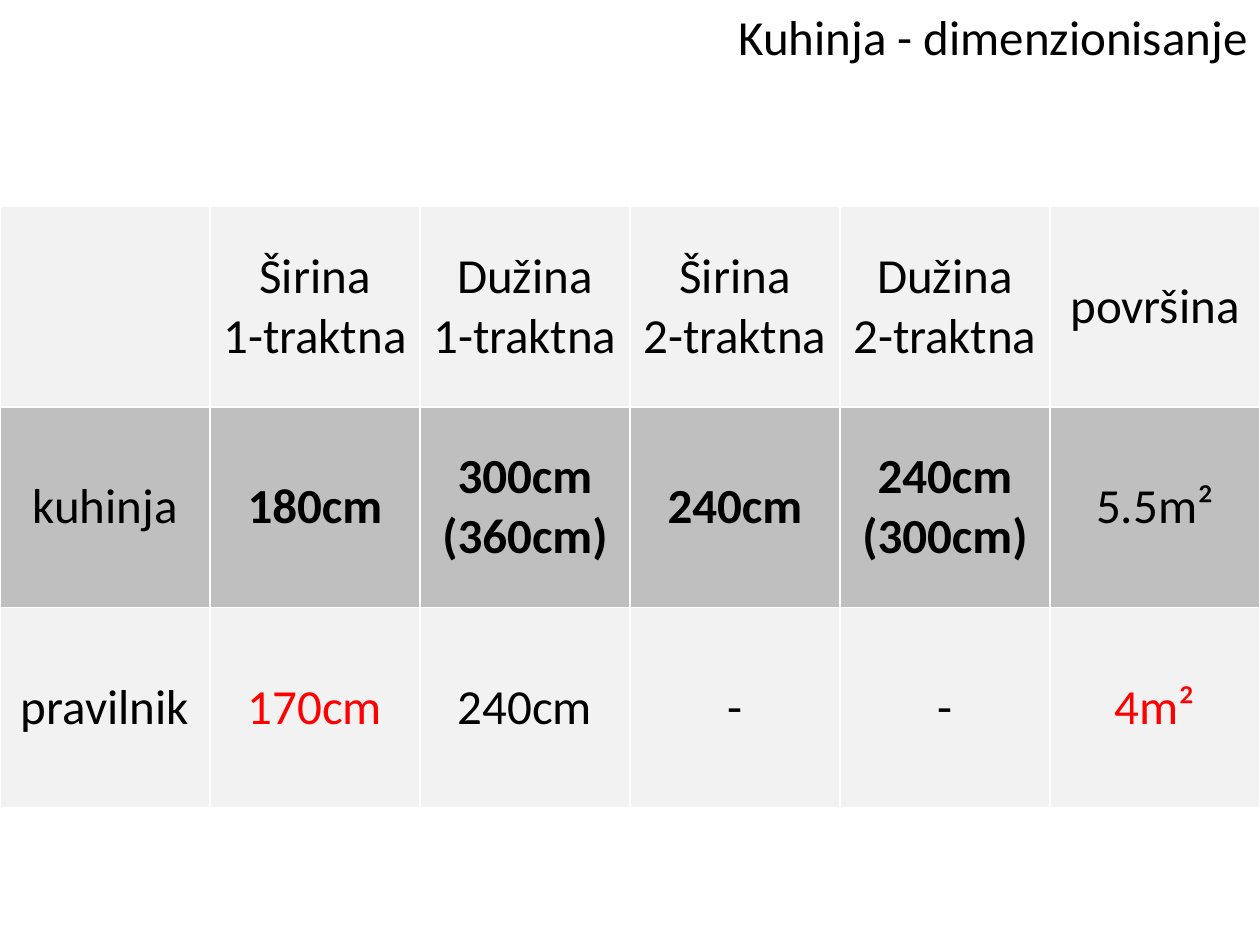
"""Build a slide with a table of kitchen dimensions."""
import dataclasses

import pptx
import pptx.dml.color
import pptx.enum.text
import pptx.util


@dataclasses.dataclass
class Theme:
    font: str = "Calibri"
    size: int = 28
    ink: str = "000000"
    mark: str = "FF0000"
    light: str = "F2F2F2"
    dark: str = "BFBFBF"


theme = Theme()
rgb = pptx.dml.color.RGBColor.from_string
align = pptx.enum.text.PP_ALIGN
anchor = pptx.enum.text.MSO_ANCHOR


def style(frame, side, color=theme.ink, bold=False):
    for para in frame.paragraphs:
        para.alignment = side
        for run in para.runs:
            run.font.name = theme.font
            run.font.size = pptx.util.Pt(theme.size)
            run.font.bold = bold
            run.font.color.rgb = rgb(color)


deck = pptx.Presentation()
deck.slide_width = pptx.util.Inches(10)
deck.slide_height = pptx.util.Inches(7.5)
wide, high = deck.slide_width, deck.slide_height
slide = deck.slides.add_slide(deck.slide_layouts[5])

title = slide.shapes.title
title.left, title.top, title.width, title.height = 0, 0, wide, high
title.text_frame.text = "Kuhinja - dimenzionisanje"
title.text_frame.vertical_anchor = anchor.TOP
title.text_frame.auto_size = pptx.enum.text.MSO_AUTO_SIZE.NONE
style(title.text_frame, align.RIGHT)

rows = [
    ["", "Širina\n1-traktna", "Dužina\n1-traktna",
     "Širina\n2-traktna", "Dužina\n2-traktna", "površina"],
    ["kuhinja", "180cm", "300cm\n(360cm)", "240cm", "240cm\n(300cm)", "5.5m²"],
    ["pravilnik", "170cm", "240cm", "-", "-", "4m²"],
]
fills = [theme.light, theme.dark, theme.light]
bolds = [(1, col) for col in range(1, 5)]
marks = [(2, 1), (2, 5)]
tight = {(0, 5): 0, (1, 0): 0, (2, 0): 0.05}

top = pptx.util.Inches(1.64)
tall = pptx.util.Inches(1.59) * len(rows)
grid = slide.shapes.add_table(len(rows), len(rows[0]), 0, top, wide, tall).table
grid.horz_banding = False

for row, texts in enumerate(rows):
    for col, text in enumerate(texts):
        spot = (row, col)
        cell = grid.cell(row, col)
        cell.fill.solid()
        cell.fill.fore_color.rgb = rgb(fills[row])
        cell.vertical_anchor = anchor.MIDDLE
        cell.text_frame.text = text
        color = theme.mark if spot in marks else theme.ink
        style(cell.text_frame, align.CENTER, color, spot in bolds)
        if spot in tight:
            gap = pptx.util.Inches(tight[spot])
            cell.margin_left = cell.margin_right = gap
            cell.margin_top = cell.margin_bottom = gap

deck.save("out.pptx")
